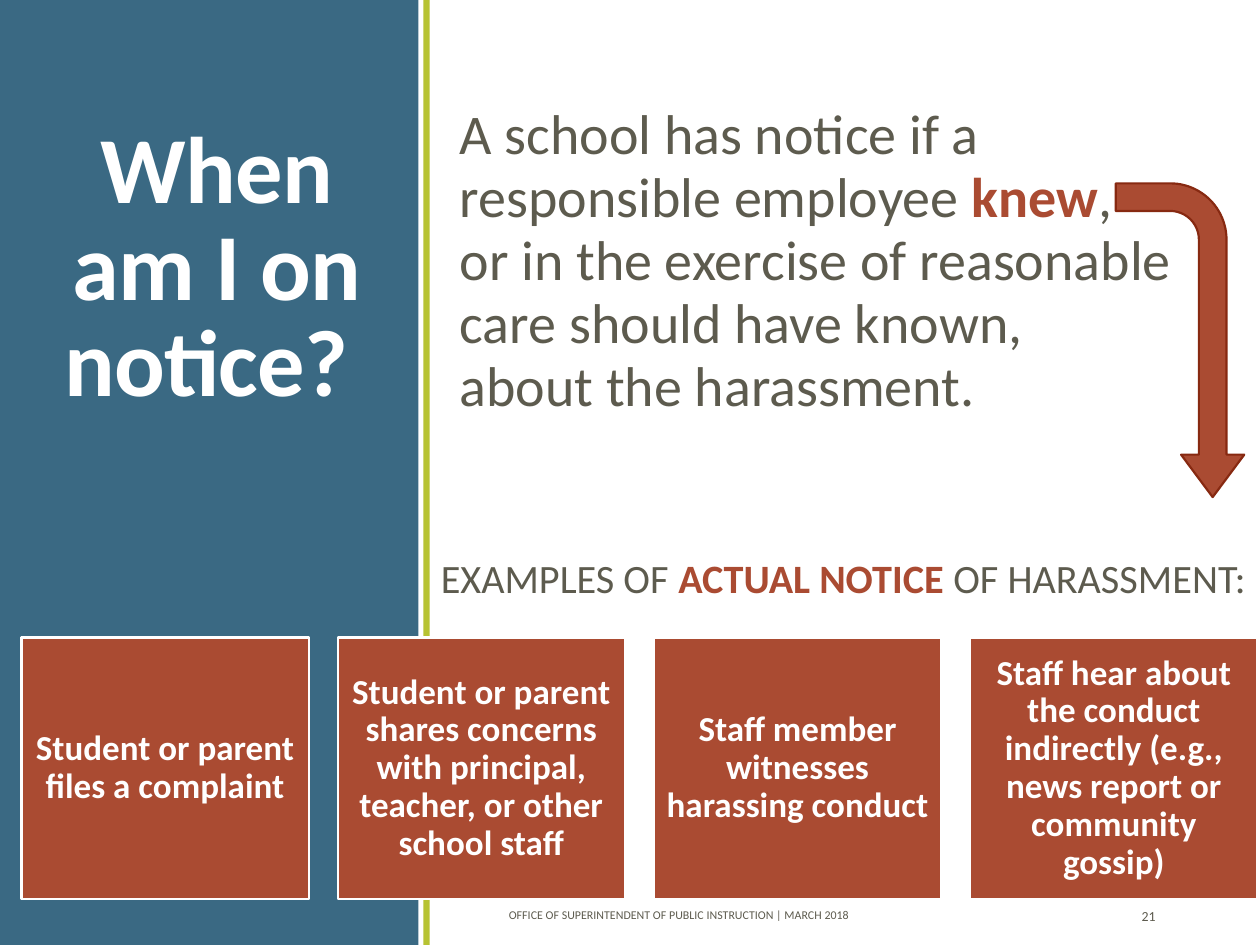
from dataclasses import dataclass

from pptx import Presentation
from pptx.dml.color import RGBColor
from pptx.enum.shapes import MSO_SHAPE
from pptx.enum.text import MSO_ANCHOR, MSO_AUTO_SIZE, PP_ALIGN
from pptx.util import Inches, Pt

RECTANGLE, BENT_ARROW = MSO_SHAPE.RECTANGLE, MSO_SHAPE.BENT_ARROW
TOP, MIDDLE, BOTTOM = MSO_ANCHOR.TOP, MSO_ANCHOR.MIDDLE, MSO_ANCHOR.BOTTOM
LEFT, CENTER, RIGHT = PP_ALIGN.LEFT, PP_ALIGN.CENTER, PP_ALIGN.RIGHT
FIXED, GROW = MSO_AUTO_SIZE.NONE, MSO_AUTO_SIZE.SHAPE_TO_FIT_TEXT
COLUMNS, ROWS = 100, 75
TITLE_ONLY = 5
LINE_BREAK = "\n"


@dataclass(frozen=True)
class Theme:
    font: str = "Calibri"
    panel: str = "3A6983"
    stripe: str = "B7C333"
    accent: str = "AA4B32"
    accent_edge: str = "872911"
    ink: str = "5D5B4E"
    white: str = "FFFFFF"
    title: float = 54
    body: float = 32
    heading: float = 23
    card: float = 20
    number: float = 7.9
    footer: float = 6.8
    edge: float = 1.25


class SlideBuilder:
    """Draws styled elements on one slide, placed by grid columns and rows."""

    def __init__(self, deck, theme):
        self.theme = theme
        self.column = deck.slide_width / COLUMNS
        self.row = deck.slide_height / ROWS
        self.page = deck.slides.add_slide(deck.slide_layouts[TITLE_ONLY])

    def place(self, left, top, width, height):
        return (round(left * self.column), round(top * self.row),
                round(width * self.column), round(height * self.row))

    def set_text(self, box, spans, size, color, align=LEFT, anchor=TOP,
                 spacing=None, fit=FIXED):
        frame = box.text_frame
        frame.word_wrap = True
        frame.auto_size = fit
        frame.vertical_anchor = anchor
        para = frame.paragraphs[0]
        para.alignment = align
        if spacing:
            para.line_spacing = spacing
        for text, span_color, bold in spans:
            if text == LINE_BREAK:
                para.add_line_break()
                continue
            span = para.add_run()
            span.text = text
            span.font.name = self.theme.font
            span.font.size = Pt(size)
            span.font.bold = bold
            span.font.color.rgb = RGBColor.from_string(span_color or color)
        return para

    def shape(self, kind, cell, fill, edge=None):
        shape = self.page.shapes.add_shape(kind, *self.place(*cell))
        shape.shadow.inherit = False
        shape.fill.solid()
        shape.fill.fore_color.rgb = RGBColor.from_string(fill)
        if edge:
            shape.line.color.rgb = RGBColor.from_string(edge)
            shape.line.width = Pt(self.theme.edge)
        else:
            shape.line.fill.background()
        return shape

    def card(self, cell, text):
        card = self.shape(RECTANGLE, cell, self.theme.accent, self.theme.white)
        frame = card.text_frame
        frame.margin_left = frame.margin_right = Inches(0.08)
        frame.margin_top = frame.margin_bottom = Inches(0.08)
        self.set_text(card, [(text, None, True)], self.theme.card,
                      self.theme.white, CENTER, MIDDLE, 0.9)

    def text(self, cell, spans, size, **style):
        box = self.page.shapes.add_textbox(*self.place(*cell))
        self.set_text(box, spans, size, self.theme.ink, **style)

    def arrow(self, cell, adjustments):
        arrow = self.shape(BENT_ARROW, cell, self.theme.accent,
                           self.theme.accent_edge)
        arrow.rotation = 90
        for index, value in enumerate(adjustments):
            arrow.adjustments[index] = value

    def title(self, cell, text):
        title = self.page.shapes.title
        title.left, title.top, title.width, title.height = self.place(*cell)
        para = self.set_text(title, [(text, None, True)], self.theme.title,
                             self.theme.white, CENTER, BOTTOM, 0.85)
        para.runs[0]._r.get_or_add_rPr().set("spc", "-40")
        title.element.getparent().append(title.element)


def main():
    """Builds the notice slide and saves it."""
    deck = Presentation()
    deck.slide_width, deck.slide_height = Inches(10), Inches(7.5)
    theme = Theme()
    slide = SlideBuilder(deck, theme)

    slide.shape(RECTANGLE, (0, 0, 33.2, ROWS), theme.panel)
    slide.shape(RECTANGLE, (33.6, 0, 0.5, ROWS), theme.stripe)
    footer = "OFFICE OF SUPERINTENDENT OF PUBLIC INSTRUCTION | MARCH 2018"
    slide.text((39.4, 70.6, 38.1, 4), [(footer, None, False)],
               theme.footer, anchor=MIDDLE)
    slide.text((81.9, 70.7, 10.8, 4), [("21", None, False)],
               theme.number, align=RIGHT, anchor=MIDDLE)

    examples = (
        "Student or parent files a complaint",
        "Student or parent shares concerns with principal, teacher, "
        "or other school staff",
        "Staff member witnesses harassing conduct",
        "Staff hear about the conduct indirectly (e.g., news report or "
        "community gossip)",
    )
    for index, example in enumerate(examples):
        slide.card((1.7 + 25.1 * index, 50.6, 22.8, 20.75), example)

    slide.text((34, 43.4, 70.9, 4.9), [
        ("EXAMPLES OF ", None, False),
        ("ACTUAL NOTICE ", theme.accent, True),
        ("OF HARASSMENT:", None, False),
    ], theme.heading, fit=GROW)
    slide.arrow((81.2, 21.9, 24.9, 10.2), (0.215, 0.246, 0.33, 0.438))
    slide.text((35.5, 7.7, 59.2, 26.3), [
        ("A school has notice if a responsible employee ", None, False),
        ("knew", theme.accent, True),
        (",", None, False),
        (LINE_BREAK, None, False),
        ("or in the exercise of reasonable care should have known,",
         None, False),
        (LINE_BREAK, None, False),
        ("about the harassment.", None, False),
    ], theme.body, spacing=Pt(36), fit=GROW)
    slide.title((2.3, 8, 29.8, 25.5), "When am I on notice? ")

    deck.save("out.pptx")


if __name__ == "__main__":
    main()
